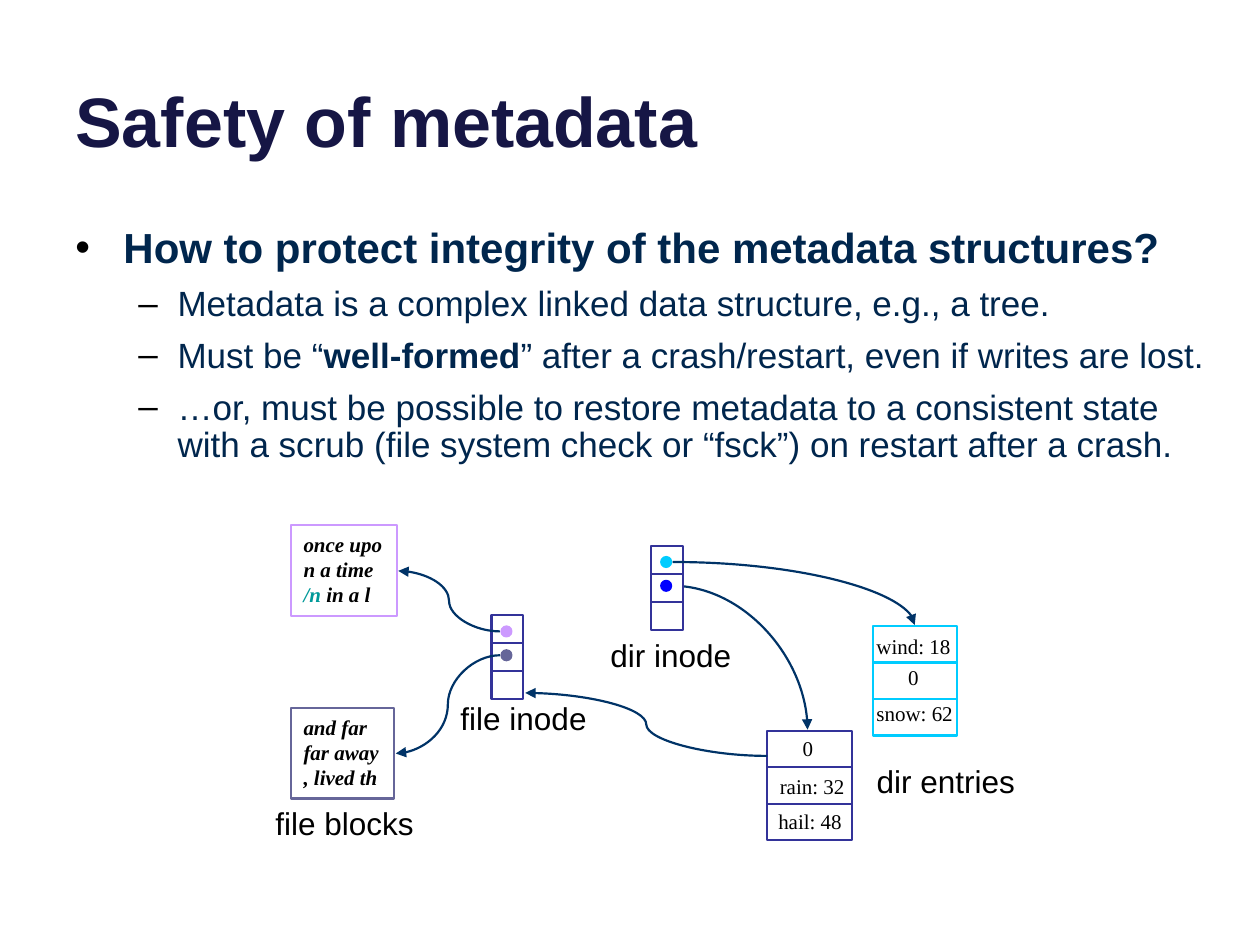
from typing import NamedTuple

from lxml import etree
from pptx import Presentation
from pptx.dml.color import RGBColor
from pptx.enum.shapes import MSO_CONNECTOR, MSO_SHAPE
from pptx.enum.text import MSO_ANCHOR, PP_ALIGN
from pptx.oxml.ns import qn
from pptx.util import Cm, Pt

RECT, OVAL = MSO_SHAPE.RECTANGLE, MSO_SHAPE.OVAL
STRAIGHT, CURVE = MSO_CONNECTOR.STRAIGHT, MSO_CONNECTOR.CURVE
TOP, BOTTOM = MSO_ANCHOR.TOP, MSO_ANCHOR.BOTTOM
LEFT, CENTER = PP_ALIGN.LEFT, PP_ALIGN.CENTER
SANS, SERIF = "Arial", "Times New Roman"
COLORS = {
    "title": "161645", "body": "00264D", "black": "000000", "white": "FFFFFF",
    "indigo": "333399", "arrow": "003367", "lilac": "CC99FF", "slate": "666699",
    "cyan": "00CCFF", "blue": "0000FF", "teal": "009999",
}
LINE_WIDTH = Pt(1.25)


class Run(NamedTuple):
    text: str
    color: str = "black"
    bold: bool = False


class Bullet(NamedTuple):
    runs: list[Run]
    level: int = 1


class Level(NamedTuple):
    char: str
    size: float
    margin: float
    hang: float
    before: float


class Entry(NamedTuple):
    text: str
    dx: float
    dy: float
    w: float


class Stack(NamedTuple):
    """A box of three cells, with pointer dots or directory entries."""
    x: float
    y: float
    w: float
    h: float
    color: str
    dots: tuple[str, ...] = ()
    entries: tuple[Entry, ...] = ()


class Block(NamedTuple):
    x: float
    y: float
    w: float
    color: str
    lines: list[list[Run]]


class Label(NamedTuple):
    text: str
    x: float
    y: float


class Pointer(NamedTuple):
    x1: float
    y1: float
    x2: float
    y2: float
    quarter: bool = False


LEVELS = [Level("•", 24, 0.97, 0.97, 9), Level("–", 20, 2.06, 0.79, 8)]
BULLETS = [
    Bullet([Run("How to protect integrity of the metadata structures?", "body", True)], 0),
    Bullet([Run("Metadata is a complex linked data structure, e.g., a tree.", "body")]),
    Bullet([Run("Must be “", "body"), Run("well-formed", "body", True),
            Run("” after a crash/restart, even if writes are lost.", "body")]),
    Bullet([Run("…or, must be possible to restore metadata to a consistent state "
                "with a scrub (file system check or “fsck”) on restart after a crash.", "body")]),
]
ENTRY_TABLES = [
    Stack(15.47, 14.73, 1.7, 2.21, "indigo", entries=(
        Entry("0", 0.46, -0.03, 0.71), Entry("rain: 32", 0, 0.74, 1.83),
        Entry("hail: 48", -0.03, 1.45, 1.8))),
    Stack(17.6, 12.62, 1.7, 2.21, "cyan", entries=(
        Entry("wind: 18", -0.18, 0.03, 2.01), Entry("0", 0.46, 0.66, 0.71),
        Entry("snow: 62", -0.18, 1.37, 2.06))),
]
INODES = [
    Stack(9.91, 12.4, 0.64, 1.7, "indigo", dots=("lilac", "slate")),
    Stack(13.13, 11, 0.64, 1.7, "indigo", dots=("cyan", "blue")),
]
BLOCKS = [
    Block(5.87, 10.59, 2.13, "lilac", [
        [Run("once upo", bold=True)], [Run("n a time", bold=True)],
        [Run("/n", "teal", True), Run(" in a l", bold=True)]]),
    Block(5.87, 14.27, 2.08, "slate", [
        [Run("and far", bold=True)], [Run("far away", bold=True)],
        [Run(", lived th", bold=True)]]),
]
LABELS = [Label("file inode", 8.84, 13.97), Label("dir inode", 11.81, 12.7),
          Label("dir entries", 17.35, 15.24), Label("file blocks", 5.23, 16.08)]
RAIN_POINTER = Pointer(13.56, 11.81, 16.28, 14.71, True)
POINTERS = [
    Pointer(10.08, 12.73, 8.03, 11.51), Pointer(10.08, 13.21, 7.98, 15.19),
    Pointer(15.47, 15.24, 10.59, 13.97), Pointer(13.56, 11.33, 18.44, 12.6, True),
]


def rgb(name: str) -> RGBColor:
    return RGBColor.from_string(COLORS[name])


def add_runs(p, runs: list[Run], font: str, size: float, italic: bool = False) -> None:
    for run in runs:
        r = p.add_run()
        r.text = run.text
        r.font.name, r.font.size = font, Pt(size)
        r.font.bold, r.font.italic = run.bold, italic
        r.font.color.rgb = rgb(run.color)


def add_text(s, x: float, y: float, w: float, h: float, wrap: bool = True, anchor=TOP):
    tf = s.shapes.add_textbox(Cm(x), Cm(y), Cm(w), Cm(h)).text_frame
    tf.word_wrap, tf.vertical_anchor = wrap, anchor
    return tf


def add_shape(s, kind, x: float, y: float, w: float, h: float, line: str, fill: str = ""):
    sp = s.shapes.add_shape(kind, Cm(x), Cm(y), Cm(w), Cm(h))
    sp.shadow.inherit = False
    if fill:
        sp.fill.solid()
        sp.fill.fore_color.rgb = rgb(fill)
    else:
        sp.fill.background()
    sp.line.color.rgb, sp.line.width = rgb(line), LINE_WIDTH
    return sp


def add_line(s, kind, x1: float, y1: float, x2: float, y2: float, color: str):
    line = s.shapes.add_connector(kind, Cm(x1), Cm(y1), Cm(x2), Cm(y2))
    line.line.color.rgb, line.line.width = rgb(color), LINE_WIDTH
    etree.SubElement(line._element.spPr, qn("a:effectLst"))
    return line


def add_pointer(s, pt: Pointer) -> None:
    line = add_line(s, CURVE, pt.x1, pt.y1, pt.x2, pt.y2, "arrow")
    spPr = line._element.spPr
    etree.SubElement(spPr.find(qn("a:ln")), qn("a:tailEnd"), type="triangle")
    if pt.quarter:
        spPr.find(qn("a:prstGeom")).set("prst", "curvedConnector2")


def add_stack(s, st: Stack) -> None:
    add_shape(s, RECT, st.x, st.y, st.w, st.h, st.color, "white")
    for i in (1, 2):
        y = st.y + st.h * i / 3
        add_line(s, STRAIGHT, st.x, y, st.x + st.w, y, st.color)
    for i, color in enumerate(st.dots):
        add_shape(s, OVAL, st.x + 0.2, st.y + 0.23 + 0.48 * i, 0.2, 0.2, color, color)
    for e in st.entries:
        tf = add_text(s, st.x + e.dx, st.y + e.dy, e.w, 0.76, wrap=False)
        add_runs(tf.paragraphs[0], [Run(e.text)], SERIF, 12)


def add_block(s, b: Block) -> None:
    tf = add_shape(s, RECT, b.x, b.y, b.w, 1.83, b.color).text_frame
    tf.word_wrap, tf.vertical_anchor = False, TOP
    for i, runs in enumerate(b.lines):
        p = tf.add_paragraph() if i else tf.paragraphs[0]
        p.alignment = LEFT
        add_runs(p, runs, SERIF, 12, italic=True)


def add_bullet(p, b: Bullet) -> None:
    lv = LEVELS[b.level]
    p.level, p.line_spacing, p.space_before = b.level, 0.9, Pt(lv.before)
    pPr = p._p.get_or_add_pPr()
    pPr.set("marL", str(Cm(lv.margin)))
    pPr.set("indent", str(-Cm(lv.hang)))
    clr = etree.SubElement(pPr, qn("a:buClr"))
    etree.SubElement(clr, qn("a:srgbClr"), val=COLORS["black"])
    etree.SubElement(pPr, qn("a:buFont"), typeface=SANS)
    etree.SubElement(pPr, qn("a:buChar"), char=lv.char)
    add_runs(p, b.runs, SANS, lv.size)


def main() -> None:
    prs = Presentation()
    prs.slide_width, prs.slide_height = Cm(25.4), Cm(19.05)
    s = prs.slides.add_slide(prs.slide_layouts[6])

    # Title and bullets
    tf = add_text(s, 1.27, -0.94, 22.86, 4.32, anchor=BOTTOM)
    add_runs(tf.paragraphs[0], [Run("Safety of metadata", "title", True)], SANS, 40)
    tf = add_text(s, 1.27, 4.45, 23.7, 13.77)
    for i, bullet in enumerate(BULLETS):
        add_bullet(tf.add_paragraph() if i else tf.paragraphs[0], bullet)

    # Diagram: the pointer to the rain table starts beneath the dir inode
    for table in ENTRY_TABLES:
        add_stack(s, table)
    add_pointer(s, RAIN_POINTER)
    for inode in INODES:
        add_stack(s, inode)
    for block in BLOCKS:
        add_block(s, block)
    for pointer in POINTERS:
        add_pointer(s, pointer)

    # Labels
    for label in LABELS:
        p = add_text(s, label.x, label.y, 3.43, 1.02).paragraphs[0]
        p.alignment = CENTER
        add_runs(p, [Run(label.text)], SANS, 18)

    prs.save("out.pptx")


if __name__ == "__main__":
    main()
